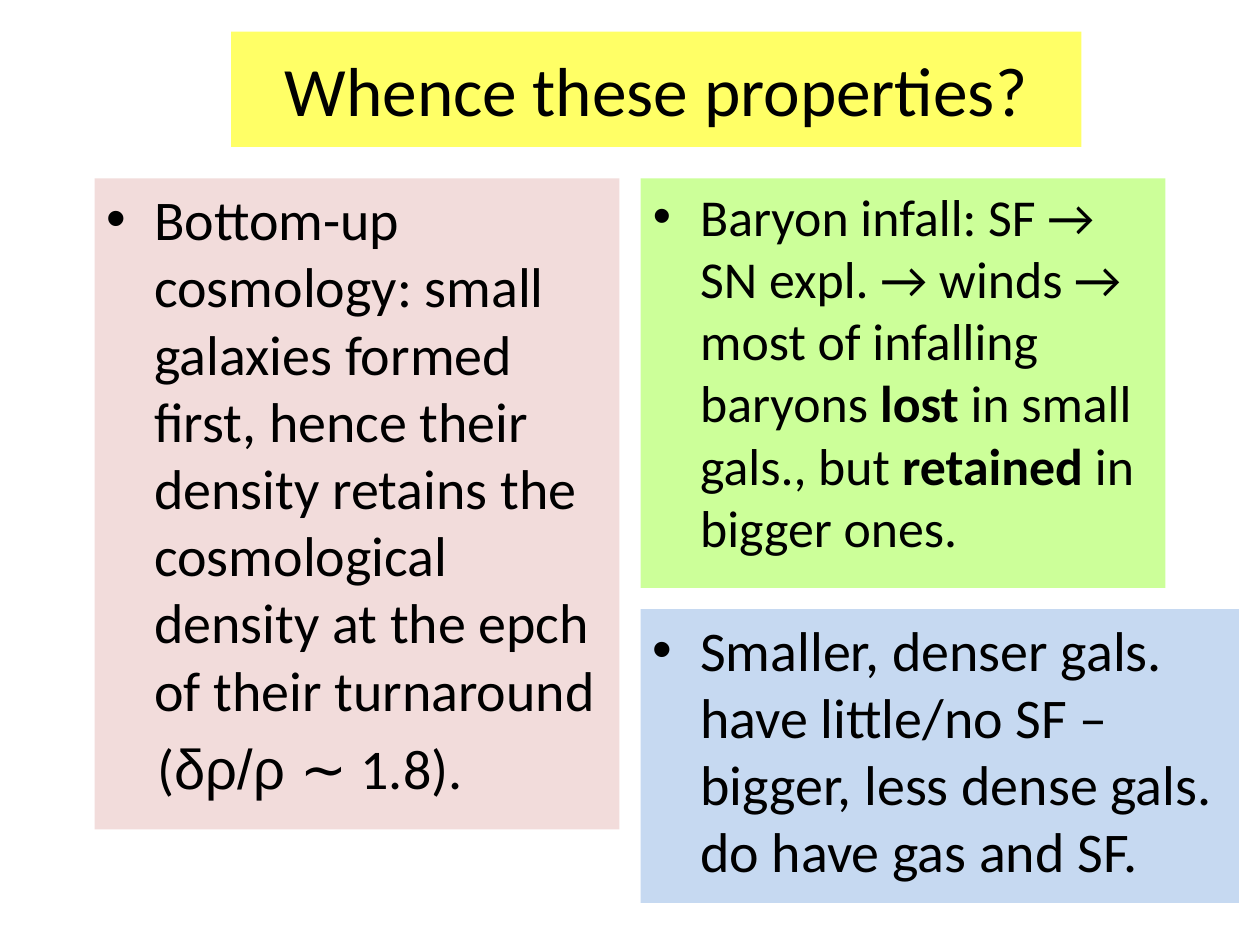
from dataclasses import dataclass

from lxml.etree import SubElement
from pptx import Presentation
from pptx.dml.color import RGBColor
from pptx.enum.shapes import MSO_SHAPE as Shape
from pptx.enum.text import MSO_ANCHOR as Anchor, MSO_AUTO_SIZE as AutoSize, PP_ALIGN as Align
from pptx.oxml.ns import qn
from pptx.util import Pt


@dataclass(frozen=True)
class Theme:
    font: str = "Calibri"
    greek_font: str = "Arial"
    text: str = "000000"
    title_fill: str = "FFFF66"
    cosmology_fill: str = "F2DCDB"
    baryon_fill: str = "CCFF99"
    gas_fill: str = "C6D9F1"
    title_size: float = 39.6
    body_size: float = 32
    compact_size: float = 29.6
    hanging_indent: float = 27
    equation_indent: float = 29


THEME = Theme()


def paint(shape, color):
    shape.fill.solid()
    shape.fill.fore_color.rgb = RGBColor.from_string(color)
    shape.line.fill.background()


def place(shape, box):
    shape.left, shape.top, shape.width, shape.height = (Pt(length) for length in box)


def add_text(paragraph, text, size=THEME.body_size, font=THEME.font, bold=False):
    run = paragraph.add_run()
    run.text = text
    run.font.size = Pt(size)
    run.font.name = font
    run.font.bold = bold
    run.font.color.rgb = RGBColor.from_string(THEME.text)


def format_paragraph(paragraph, size, margin, bulleted):
    paragraph.alignment = Align.LEFT
    paragraph.space_before = Pt(size * 0.2)
    properties = paragraph._p.get_or_add_pPr()
    properties.set("marL", str(Pt(margin)))
    if bulleted:
        properties.set("indent", str(Pt(-margin)))
        SubElement(properties, qn("a:buFont"), typeface="Arial")
        SubElement(properties, qn("a:buChar"), char="•")


def add_title(slide, box, text):
    title = slide.shapes.title
    place(title, box)
    paint(title, THEME.title_fill)
    frame = title.text_frame
    frame.auto_size = AutoSize.NONE
    frame.vertical_anchor = Anchor.MIDDLE
    paragraph = frame.paragraphs[0]
    paragraph.alignment = Align.CENTER
    add_text(paragraph, text, size=THEME.title_size)


def add_panel(slide, box, color, runs, size=THEME.body_size):
    panel = slide.shapes.add_shape(Shape.RECTANGLE, *(Pt(length) for length in box))
    panel.shadow.inherit = False
    paint(panel, color)
    frame = panel.text_frame
    frame.word_wrap = True
    frame.vertical_anchor = Anchor.TOP
    paragraph = frame.paragraphs[0]
    format_paragraph(paragraph, size, THEME.hanging_indent, bulleted=True)
    for text, bold in runs:
        add_text(paragraph, text, size=size, bold=bold)
    return frame


def add_cosmology_panel(slide, box):
    frame = add_panel(slide, box, THEME.cosmology_fill, [
        ("Bottom-up cosmology: small galaxies formed first, hence their density "
         "retains the cosmological density at the epch of their turnaround", False),
    ])
    equation = frame.add_paragraph()
    format_paragraph(equation, THEME.body_size, THEME.equation_indent, bulleted=False)
    add_text(equation, "(")
    add_text(equation, "δρ/ρ ", font=THEME.greek_font)
    add_text(equation, "∼ 1.8).")


def add_baryon_panel(slide, box):
    add_panel(slide, box, THEME.baryon_fill, [
        ("Baryon infall: SF → SN expl. → winds → most of infalling baryons ", False),
        ("lost", True),
        (" in small gals., but ", False),
        ("retained", True),
        (" in bigger ones.", False),
    ], size=THEME.compact_size)


def add_gas_panel(slide, box):
    add_panel(slide, box, THEME.gas_fill, [
        ("Smaller, denser gals. have little/no SF – bigger, less dense gals. "
         "do have gas and SF.", False),
    ])


def main():
    presentation = Presentation()
    presentation.slide_width, presentation.slide_height = Pt(720), Pt(540)
    slide = presentation.slides.add_slide(presentation.slide_layouts[5])

    left, top, gap, column = 54, 102, 12, 300
    right = left + column + gap
    baryon_height = 234
    add_title(slide, (132, 18, 486, 66), "Whence these properties?")
    add_cosmology_panel(slide, (left, top, column, 372))
    add_baryon_panel(slide, (right, top, column, baryon_height))
    add_gas_panel(slide, (right, top + baryon_height + gap, 342, 168))

    presentation.save("out.pptx")


if __name__ == "__main__":
    main()
